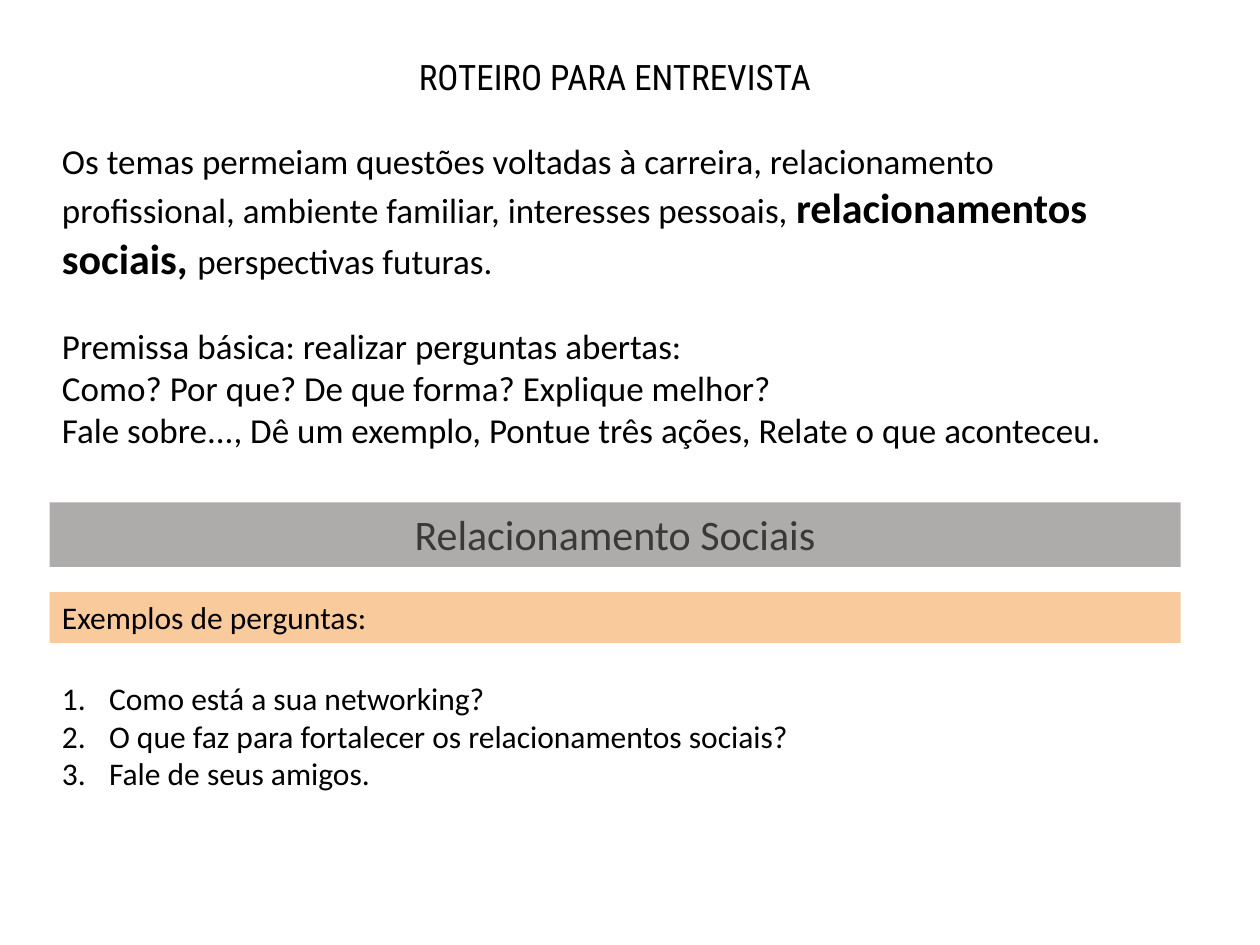
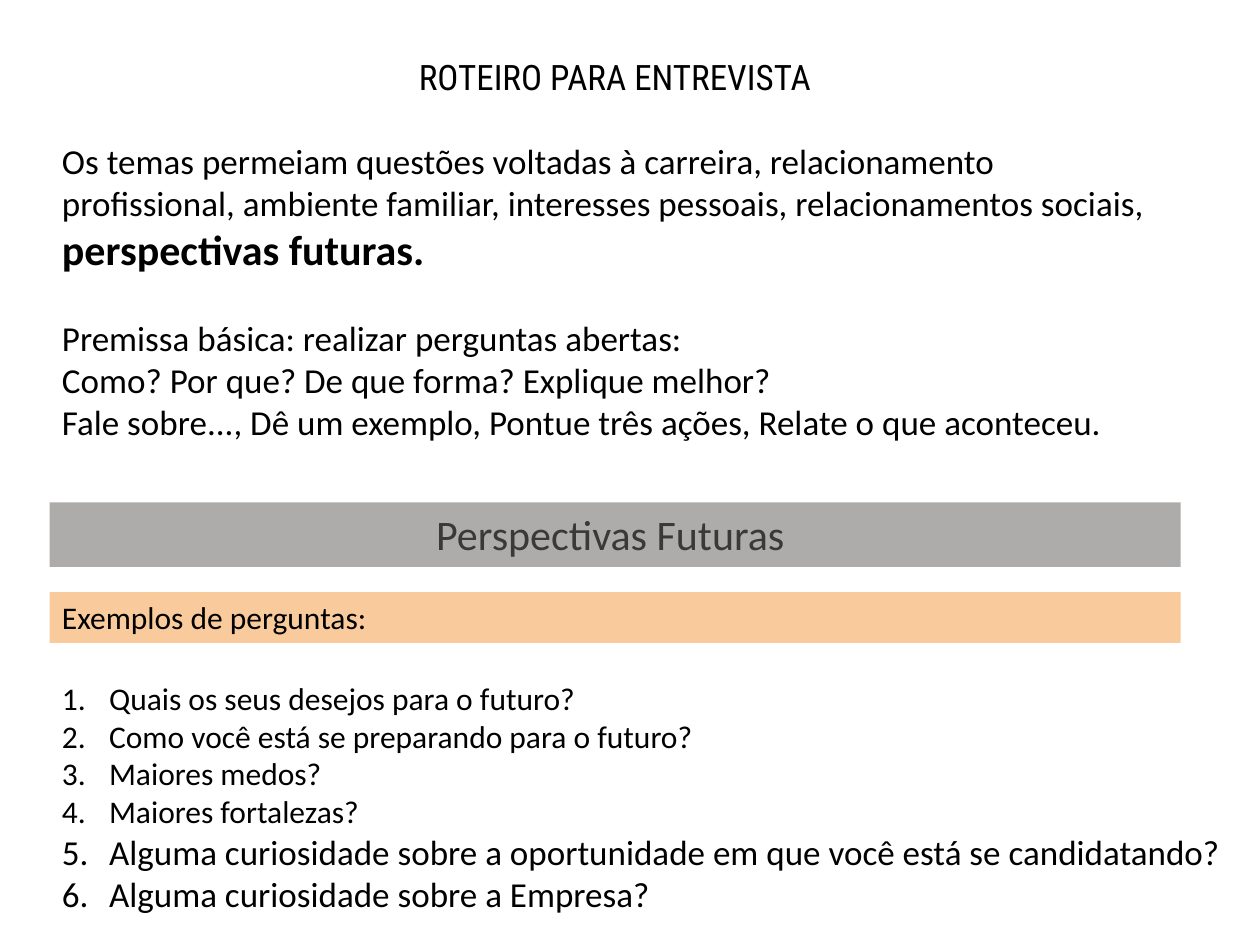
from lxml import etree
from pptx import Presentation
from pptx import util as u
from pptx.dml.color import RGBColor
from pptx.enum import shapes, text
from pptx.oxml.ns import qn

BLACK = RGBColor(0x00, 0x00, 0x00)
DARK = RGBColor(0x3A, 0x38, 0x38)
GRAY = RGBColor(0xAE, 0xAB, 0xAB)
PEACH = RGBColor(0xF9, 0xCB, 0x9C)

LEFT, WIDTH = 1, 22.8
GAP = u.Pt(24)
INDENT = u.Cm(0.95)
CENTER = text.PP_ALIGN.CENTER

THEMES = ("Os temas permeiam questões voltadas à carreira, relacionamento "
          "profissional, ambiente familiar, interesses pessoais, ")
ADVICE = [
    "Premissa básica: realizar perguntas abertas:",
    "Como? Por que? De que forma? Explique melhor?",
    "Fale sobre..., Dê um exemplo, Pontue três ações, Relate o que aconteceu.",
]

# Topic, theme runs (words, bold), questions (words, size), list width and height
TOPICS = [
    ("Relacionamento Sociais",
     [(THEMES, False), ("relacionamentos sociais, ", True),
      ("perspectivas futuras.", False)],
     [("Como está a sua networking?", 18),
      ("O que faz para fortalecer os relacionamentos sociais?", 18),
      ("Fale de seus amigos.", 18)],
     WIDTH, 2.57),
    ("Perspectivas Futuras ",
     [(THEMES + "relacionamentos sociais, ", False),
      ("perspectivas futuras.", True)],
     [("Quais os seus desejos para o futuro?", 18),
      ("Como você está se preparando para o futuro?", 18),
      ("Maiores medos?", 18),
      ("Maiores fortalezas?", 18),
      ("Alguma curiosidade sobre a oportunidade em que você está se "
       "candidatando?", 20),
      ("Alguma curiosidade sobre a Empresa?", 20)],
     24.16, 5.05),
]


class Deck:
    """Holds the shared style and the current slide."""

    base = {"name": "Calibri", "size": 20, "bold": False, "color": BLACK}

    def __init__(self):
        self.prs = Presentation()
        self.prs.slide_width, self.prs.slide_height = u.Cm(25.4), u.Cm(19.05)

    def page(self):
        self.slide = self.prs.slides.add_slide(self.prs.slide_layouts[6])

    def run(self, para, words, **style):
        font = para.add_run()
        font.text = words
        font = font.font
        for key, value in {**self.base, **style}.items():
            if key == "color":
                font.color.rgb = value
            else:
                setattr(font, key, u.Pt(value) if key == "size" else value)

    def para(self, frame, runs, **layout):
        """Fill the first paragraph if it is free, else add one."""
        first = frame.paragraphs[0]
        para = frame.add_paragraph() if first.runs else first
        for key, value in {"alignment": text.PP_ALIGN.LEFT, **layout}.items():
            setattr(para, key, value)
        for words, style in runs:
            self.run(para, words, **style)
        return para

    def frame(self, shape):
        frame = shape.text_frame
        frame.word_wrap = True
        frame.vertical_anchor = text.MSO_ANCHOR.TOP
        return frame

    def box(self, top, width, height):
        return self.frame(self.slide.shapes.add_textbox(
            u.Cm(LEFT), u.Cm(top), u.Cm(width), u.Cm(height)))

    def band(self, top, height, fill, words, style, **layout):
        shape = self.slide.shapes.add_shape(
            shapes.MSO_SHAPE.RECTANGLE,
            u.Cm(LEFT), u.Cm(top), u.Cm(WIDTH), u.Cm(height))
        shape.shadow.inherit = False
        shape.fill.solid()
        shape.fill.fore_color.rgb = fill
        shape.line.fill.background()
        self.para(self.frame(shape), [(words, style)], **layout)

    def asks(self, top, width, height, items):
        """Numbered list with a hanging indent."""
        frame = self.box(top, width, height)
        for words, size in items:
            props = self.para(frame, [(words, {"size": size})])._p.get_or_add_pPr()
            props.set("marL", str(INDENT))
            props.set("indent", str(-INDENT))
            mark = etree.SubElement(props, qn("a:buAutoNum"))
            mark.set("type", "arabicPeriod")

    def intro(self, themes):
        frame = self.box(1, WIDTH, 9.14)
        self.para(frame, [("ROTEIRO PARA ENTREVISTA",
                           {"name": "Roboto Condensed"})],
                  alignment=CENTER, space_after=GAP)
        self.para(frame, [(words, {"size": 24 if bold else 20, "bold": bold})
                          for words, bold in themes], space_after=GAP)
        for line in ADVICE:
            self.para(frame, [(line, {})])


def main():
    deck = Deck()
    for topic, themes, items, width, height in TOPICS:
        deck.page()
        # Heading bands
        deck.band(10.13, 1.3, GRAY, topic, {"size": 24, "color": DARK},
                  alignment=CENTER)
        deck.band(11.94, 1.02, PEACH, "Exemplos de perguntas:", {"size": 18})
        # Questions and introduction
        deck.asks(13.56, width, height, items)
        deck.intro(themes)
    deck.prs.save("out.pptx")


if __name__ == "__main__":
    main()
